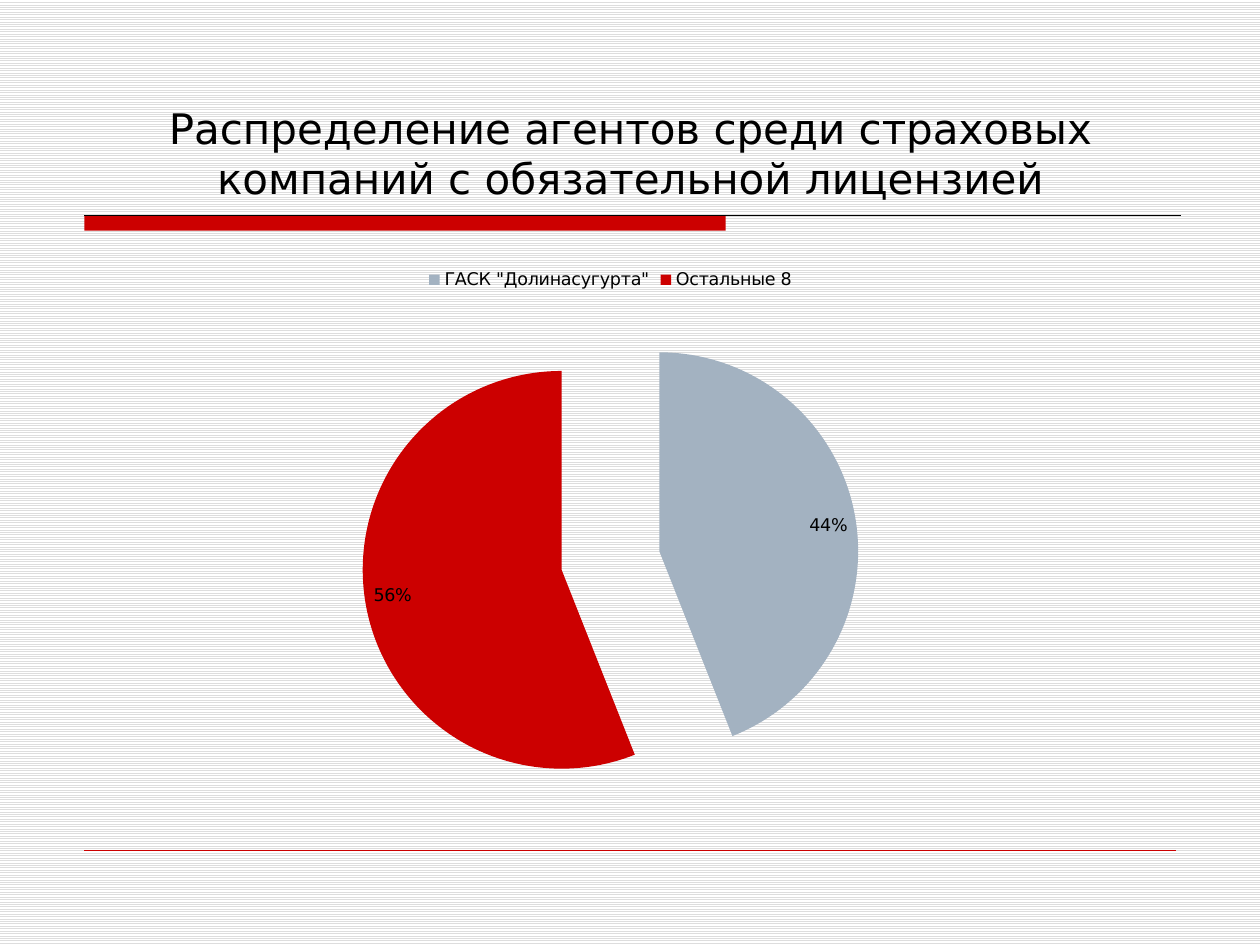
"""Build a slide with an exploded pie of insurance agents by company."""
from lxml import etree
from pptx import Presentation
from pptx.chart.data import CategoryChartData
from pptx.dml.color import RGBColor
from pptx.enum.chart import XL_CHART_TYPE, XL_LABEL_POSITION, XL_LEGEND_POSITION
from pptx.enum.dml import MSO_PATTERN
from pptx.enum.shapes import MSO_CONNECTOR, MSO_SHAPE
from pptx.enum.text import MSO_ANCHOR, PP_ALIGN
from pptx.oxml.ns import qn
from pptx.util import Inches, Pt

PIE = XL_CHART_TYPE.PIE
INSIDE_END = XL_LABEL_POSITION.INSIDE_END
LEGEND_TOP = XL_LEGEND_POSITION.TOP
LIGHT_HORIZONTAL = MSO_PATTERN.LIGHT_HORIZONTAL
STRAIGHT = MSO_CONNECTOR.STRAIGHT
RECTANGLE = MSO_SHAPE.RECTANGLE
BOTTOM = MSO_ANCHOR.BOTTOM
CENTER = PP_ALIGN.CENTER

THEME = {
    "font": "DejaVu Sans",
    "text": RGBColor(0x00, 0x00, 0x00),
    "accent": RGBColor(0xCC, 0x00, 0x00),
    "slate": RGBColor(0xA3, 0xB2, 0xC1),
    "stripe": RGBColor(0xDD, 0xDD, 0xDD),
    "paper": RGBColor(0xFF, 0xFF, 0xFF),
    "title_size": Pt(24),
    "chart_size": Pt(10),
}
EXPLOSION = 25
COMPANIES = [
    ('ГАСК "Долинасугурта"', 44, THEME["slate"]),
    ("Остальные 8", 56, THEME["accent"]),
]

deck = Presentation()
deck.slide_width, deck.slide_height = Inches(10), Inches(7.5)
slide = deck.slides.add_slide(deck.slide_layouts[6])


def box(*inches):
    return [Inches(value) for value in inches]


def apply(target, values):
    for attribute, value in values.items():
        setattr(target, attribute, value)


backdrop = slide.background.fill
backdrop.patterned()
backdrop.pattern = LIGHT_HORIZONTAL
backdrop.fore_color.rgb = THEME["stripe"]
backdrop.back_color.rgb = THEME["paper"]

margin, bar_top, footer_top = 0.67, 1.71, 6.75
title_bar = slide.shapes.add_shape(RECTANGLE, *box(margin, bar_top, 5.09, 0.12))
title_bar.shadow.inherit = False
title_bar.fill.solid()
title_bar.fill.fore_color.rgb = THEME["accent"]
title_bar.line.fill.background()

for top, right, color, width in (
    (bar_top, 9.37, THEME["text"], 0.75),
    (footer_top, 10 - margin, THEME["accent"], 0.25),
):
    rule = slide.shapes.add_connector(STRAIGHT, *box(margin, top, right, top))
    rule.line.color.rgb = color
    rule.line.width = Pt(width)
    etree.SubElement(rule._element.spPr, qn("a:effectLst"))

heading = slide.shapes.add_textbox(*box(0.63, 0.33, 8.75, 1.33)).text_frame
apply(heading, {
    "word_wrap": True,
    "vertical_anchor": BOTTOM,
    "text": "Распределение агентов среди страховых компаний с обязательной лицензией",
})
heading.paragraphs[0].alignment = CENTER
heading_font = heading.paragraphs[0].runs[0].font
apply(heading_font, {"name": THEME["font"], "size": THEME["title_size"]})
heading_font.color.rgb = THEME["text"]

agents = CategoryChartData()
agents.categories = [company for company, share, color in COMPANIES]
agents.add_series("Series 1", [share for company, share, color in COMPANIES])
pie = slide.shapes.add_chart(PIE, *box(0.94, 2.03, 7.81, 4.53), agents).chart
apply(pie, {"has_title": False, "has_legend": True})
apply(pie.legend, {"position": LEGEND_TOP, "include_in_layout": False})
apply(pie.font, {"name": THEME["font"], "size": THEME["chart_size"]})
pie.font.color.rgb = THEME["text"]

plot = pie.plots[0]
apply(plot, {"vary_by_categories": True, "has_data_labels": True})
apply(plot.data_labels, {
    "show_percentage": True,
    "show_value": False,
    "number_format": "0%",
    "number_format_is_linked": False,
    "position": INSIDE_END,
})

slices = plot.series[0]
for index, (company, share, color) in enumerate(COMPANIES):
    wedge = slices.points[index].format
    wedge.fill.solid()
    wedge.fill.fore_color.rgb = color
    wedge.line.fill.background()
explosion = etree.Element(qn("c:explosion"), val=str(EXPLOSION))
slices._element.find(qn("c:dPt")).addprevious(explosion)

deck.save("out.pptx")
